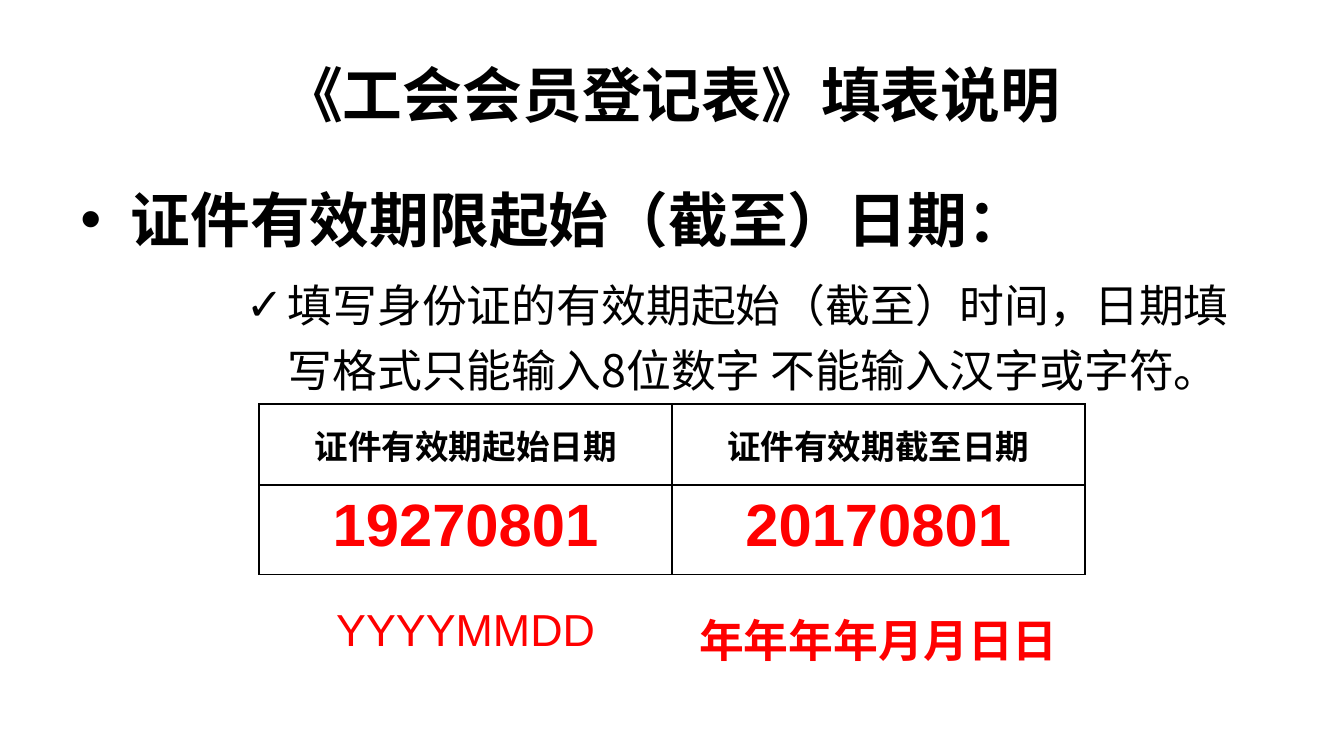
from lxml import etree
from pptx import Presentation
from pptx.dml.color import RGBColor
from pptx.enum import text
from pptx.oxml.ns import qn
from pptx.util import Cm, Pt

COLORS = {"ink": "000000", "sample": "FF0000"}
LATIN, CJK = "Arial", "Noto Sans CJK SC"


def style(paragraph, size, color="ink", bold=False, name=LATIN, align=None):
    font = paragraph.font
    font.size, font.bold, font.name = Pt(size), bold, name
    font.color.rgb = RGBColor.from_string(COLORS[color])
    defaults = paragraph._p.pPr.find(qn("a:defRPr"))
    etree.SubElement(defaults, qn("a:ea"), typeface=CJK)
    if align is not None:
        paragraph.alignment = align


def add_title(slide, box, wording):
    title = slide.shapes.title
    title.left, title.top, title.width, title.height = box
    title.text_frame.text = wording
    title.text_frame.vertical_anchor = text.MSO_ANCHOR.MIDDLE
    style(title.text_frame.paragraphs[0], 32, bold=True, align=text.PP_ALIGN.CENTER)


def add_bullet(slide, box, wording, mark, indent, line_spacing=None, **look):
    """Text box with one paragraph hanging from a bullet mark."""
    frame = slide.shapes.add_textbox(*box).text_frame
    frame.word_wrap = True
    paragraph = frame.paragraphs[0]
    paragraph.text = wording
    properties = paragraph._p.get_or_add_pPr()
    properties.set("marL", str(indent))
    properties.set("indent", str(-indent))
    etree.SubElement(properties, qn("a:buFont"), typeface=LATIN)
    etree.SubElement(properties, qn("a:buChar"), char=mark)
    if line_spacing:
        paragraph.line_spacing = line_spacing
    style(paragraph, **look)


def add_borders(cell):
    properties = cell._tc.get_or_add_tcPr()
    for position, side in enumerate(("lnL", "lnR", "lnT", "lnB")):
        line = etree.Element(qn(f"a:{side}"), w=str(Pt(1)))
        fill = etree.SubElement(line, qn("a:solidFill"))
        etree.SubElement(fill, qn("a:srgbClr"), val=COLORS["ink"])
        properties.insert(position, line)


def add_grid(slide, box, heights, rows, looks, bordered=False):
    """Plain centred table; looks holds the text style of each cell."""
    table = slide.shapes.add_table(len(rows), len(rows[0]), *box).table
    table.first_row = table.horz_banding = False
    for r, (height, row) in enumerate(zip(heights, rows)):
        table.rows[r].height = height
        for c, wording in enumerate(row):
            cell = table.cell(r, c)
            cell.text = wording
            cell.fill.background()
            style(cell.text_frame.paragraphs[0], align=text.PP_ALIGN.CENTER,
                  **looks[r][c])
            if bordered:
                add_borders(cell)
    return table


def add_date_tables(slide, left, top, width):
    header = dict(size=18, bold=True, name=CJK)
    date = dict(size=32, color="sample", bold=True)
    pattern = dict(size=24, color="sample")
    heights = Cm(1.53), Cm(1.69)
    dates = add_grid(
        slide, (left, top, width, sum(heights)), heights,
        [["证件有效期起始日期", "证件有效期截至日期"], ["19270801", "20170801"]],
        [[header] * 2, [date] * 2], bordered=True)
    for cell in dates.rows[0].cells:
        cell.vertical_anchor = text.MSO_ANCHOR.MIDDLE
        cell.margin_left = cell.margin_right = 0
        cell.margin_top = cell.margin_bottom = 0
    pattern_height = Cm(1.6)
    add_grid(slide, (left, top + Cm(3.68), width, pattern_height), [pattern_height],
             [["YYYYMMDD", "年年年年月月日日"]],
             [[pattern, dict(pattern, bold=True)]])


def main():
    deck = Presentation()
    deck.slide_width, deck.slide_height = Cm(25.4), Cm(14.29)
    slide = deck.slides.add_slide(deck.slide_layouts[5])
    add_title(slide, (Cm(1.27), Cm(0.58), Cm(22.86), Cm(2.39)),
              "《工会会员登记表》填表说明")
    add_bullet(slide, (Cm(1.27), Cm(3.33), Cm(18.03), Cm(1.47)),
               "证件有效期限起始（截至）日期：", "•", Cm(0.95), size=32, bold=True)
    add_bullet(slide, (Cm(4.4), Cm(4.93), Cm(19.73), Cm(2.72)),
               "填写身份证的有效期起始（截至）时间，日期填写格式只能输入8位数字 不能输入汉字或字符。",
               "✓", Cm(0.79), line_spacing=1.2, size=24, name=CJK)
    add_date_tables(slide, Cm(4.9), Cm(7.64), Cm(15.6))
    deck.save("out.pptx")


if __name__ == "__main__":
    main()
